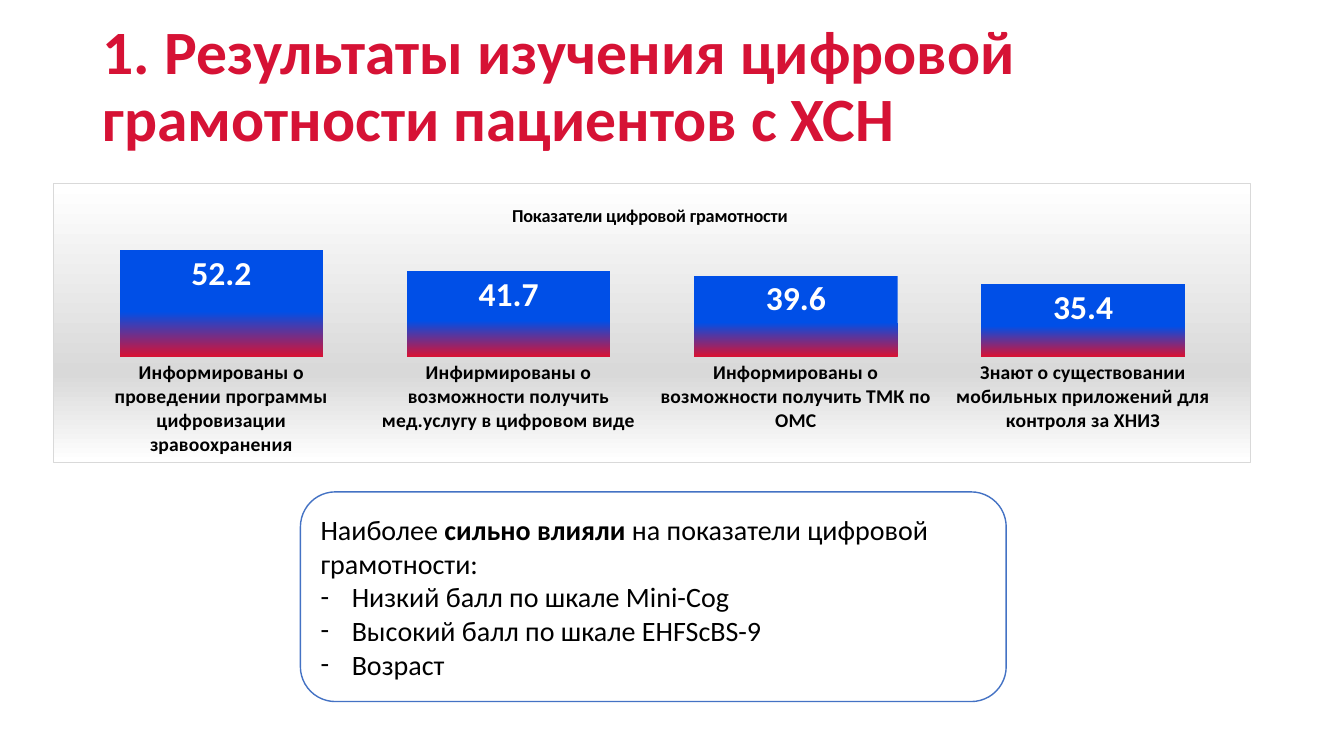
from lxml import etree
from pptx import Presentation
from pptx.chart.data import CategoryChartData
from pptx.dml.color import RGBColor
from pptx.enum.chart import XL_CHART_TYPE, XL_LABEL_POSITION, XL_TICK_MARK
from pptx.enum.shapes import MSO_SHAPE
from pptx.enum.text import MSO_ANCHOR, PP_ALIGN
from pptx.oxml import parse_xml
from pptx.oxml.ns import nsdecls, qn
from pptx.util import Inches, Pt

COLUMN = XL_CHART_TYPE.COLUMN_CLUSTERED
INSIDE_END = XL_LABEL_POSITION.INSIDE_END
NO_TICKS = XL_TICK_MARK.NONE
ROUNDED = MSO_SHAPE.ROUNDED_RECTANGLE
MIDDLE = MSO_ANCHOR.MIDDLE
LEFT = PP_ALIGN.LEFT

RED = RGBColor(0xD6, 0x12, 0x35)
BLUE = RGBColor(0x00, 0x4F, 0xE7)
OUTLINE_BLUE = RGBColor(0x44, 0x72, 0xC4)
GRAY = RGBColor(0xD9, 0xD9, 0xD9)
BLACK = RGBColor(0, 0, 0)
WHITE = RGBColor(0xFF, 0xFF, 0xFF)

LITERACY = [
    ("Информированы о проведении программы цифровизации зравоохранения", 52.2),
    ("Инфирмированы о возможности получить мед.услугу в цифровом виде", 41.7),
    ("Информированы о возможности получить ТМК по ОМС", 39.6),
    ("Знают о существовании мобильных приложений для контроля за ХНИЗ", 35.4),
]
FACTORS = [
    "Низкий балл по шкале Mini-Cog",
    "Высокий балл по шкале EHFScBS-9",
    "Возраст",
]


def gradient_properties(stops, border=None):
    """Chart shape properties with a top-to-bottom gradient and optional border."""
    stop_xml = "".join(
        f'<a:gs pos="{position * 1000}"><a:srgbClr val="{color}"/></a:gs>'
        for position, color in stops
    )
    line_fill = (
        f'<a:solidFill><a:srgbClr val="{border}"/></a:solidFill>'
        if border is not None else "<a:noFill/>"
    )
    return parse_xml(
        f'<c:spPr {nsdecls("c", "a")}><a:gradFill><a:gsLst>{stop_xml}</a:gsLst>'
        f'<a:lin ang="5400000" scaled="0"/></a:gradFill>'
        f'<a:ln w="9525">{line_fill}</a:ln></c:spPr>'
    )


def manual_layout(inner=False, **fractions):
    target = '<c:layoutTarget val="inner"/>' if inner else ""
    modes = '<c:xMode val="edge"/><c:yMode val="edge"/>'
    values = "".join(f'<c:{name} val="{value}"/>' for name, value in fractions.items())
    return parse_xml(
        f'<c:layout {nsdecls("c")}><c:manualLayout>{target}{modes}{values}'
        f"</c:manualLayout></c:layout>"
    )


class SlideBuilder:
    font_name = "Calibri"

    def __init__(self, slide):
        self.slide = slide

    def style(self, font, size, color, bold=None):
        font.name = self.font_name
        font.size = Pt(size)
        font.color.rgb = color
        font.bold = bold

    def title(self, text, box):
        frame = self.slide.shapes.add_textbox(*map(Inches, box)).text_frame
        frame.word_wrap = True
        frame.vertical_anchor = MIDDLE
        paragraph = frame.paragraphs[0]
        paragraph.text = text
        paragraph.line_spacing = 0.9
        self.style(paragraph.font, 44, RED, True)

    def column_chart(self, title, rows, box):
        data = CategoryChartData()
        data.categories = [category for category, _ in rows]
        data.add_series("Series 1", [value for _, value in rows])
        chart = self.slide.shapes.add_chart(COLUMN, *map(Inches, box), data).chart
        self.style(chart.font, 11, BLACK, True)
        chart.has_legend = False
        chart.element.find(qn("c:chart")).addnext(
            gradient_properties([(0, WHITE), (68, GRAY), (100, WHITE)], GRAY))
        self.chart_title(chart, title)
        self.axes(chart)
        self.columns(chart.plots[0])

    def chart_title(self, chart, text):
        chart.has_title = True
        title = chart.chart_title
        title.include_in_layout = False
        paragraph = title.text_frame.paragraphs[0]
        paragraph.text = text
        self.style(paragraph.font, 13, BLACK, True)
        for layout in title._element.findall(qn("c:layout")):
            title._element.remove(layout)
        title._element.find(qn("c:tx")).addnext(manual_layout(x=0.38, y=0.06))

    def axes(self, chart):
        value_axis = chart.value_axis
        value_axis.minimum_scale, value_axis.maximum_scale = 0, 60
        value_axis.has_major_gridlines = False
        value_axis.visible = False
        category_axis = chart.category_axis
        category_axis.major_tick_mark = NO_TICKS
        category_axis.format.line.fill.background()
        self.style(category_axis.tick_labels.font, 14, BLACK, True)
        plot_area = chart.element.find(".//" + qn("c:plotArea"))
        for layout in plot_area.findall(qn("c:layout")):
            plot_area.remove(layout)
        plot_area.insert(0, manual_layout(inner=True, x=0.02, y=0.18, w=0.96, h=0.44))

    def columns(self, plot):
        plot.gap_width = 41
        plot.vary_by_categories = False
        series = plot.series[0]
        series._element.find(qn("c:tx")).addnext(
            gradient_properties([(58, BLUE), (100, RED)]))
        labels = series.data_labels
        labels.show_value = True
        labels.position = INSIDE_END
        self.style(labels.font, 24, WHITE, True)

    def factor_card(self, intro, factors, box):
        """Rounded card: intro is (text, bold) runs, factors are dashed items."""
        shape = self.slide.shapes.add_shape(ROUNDED, *map(Inches, box))
        shape.shadow.inherit = False
        shape.fill.solid()
        shape.fill.fore_color.rgb = WHITE
        shape.line.color.rgb = OUTLINE_BLUE
        shape.line.width = Pt(1)
        frame = shape.text_frame
        frame.word_wrap = True
        frame.vertical_anchor = MIDDLE
        for text, bold in intro:
            run = frame.paragraphs[0].add_run()
            run.text = text
            run.font.bold = bold
        for factor in factors:
            paragraph = frame.add_paragraph()
            paragraph.text = factor
            self.dash(paragraph)
        for paragraph in frame.paragraphs:
            paragraph.alignment = LEFT
            self.style(paragraph.font, 20, BLACK)

    def dash(self, paragraph):
        properties = paragraph._p.get_or_add_pPr()
        indent = Inches(0.31)
        properties.set("marL", str(indent))
        properties.set("indent", str(-indent))
        etree.SubElement(properties, qn("a:buFont"), typeface=self.font_name)
        etree.SubElement(properties, qn("a:buChar"), char="-")


def main():
    presentation = Presentation()
    presentation.slide_width = Inches(13.33)
    presentation.slide_height = Inches(7.5)
    builder = SlideBuilder(presentation.slides.add_slide(presentation.slide_layouts[6]))
    builder.title("1. Результаты изучения цифровой грамотности пациентов с ХСН",
                  (0.92, 0.15, 11.5, 1.45))
    builder.column_chart("Показатели цифровой грамотности", LITERACY,
                         (0.53, 1.82, 11.88, 2.77))
    intro = [("Наиболее ", False), ("сильно влияли ", True),
             ("на показатели цифровой грамотности:", False)]
    builder.factor_card(intro, FACTORS, (2.98, 4.88, 7, 2.08))
    presentation.save("out.pptx")


if __name__ == "__main__":
    main()
